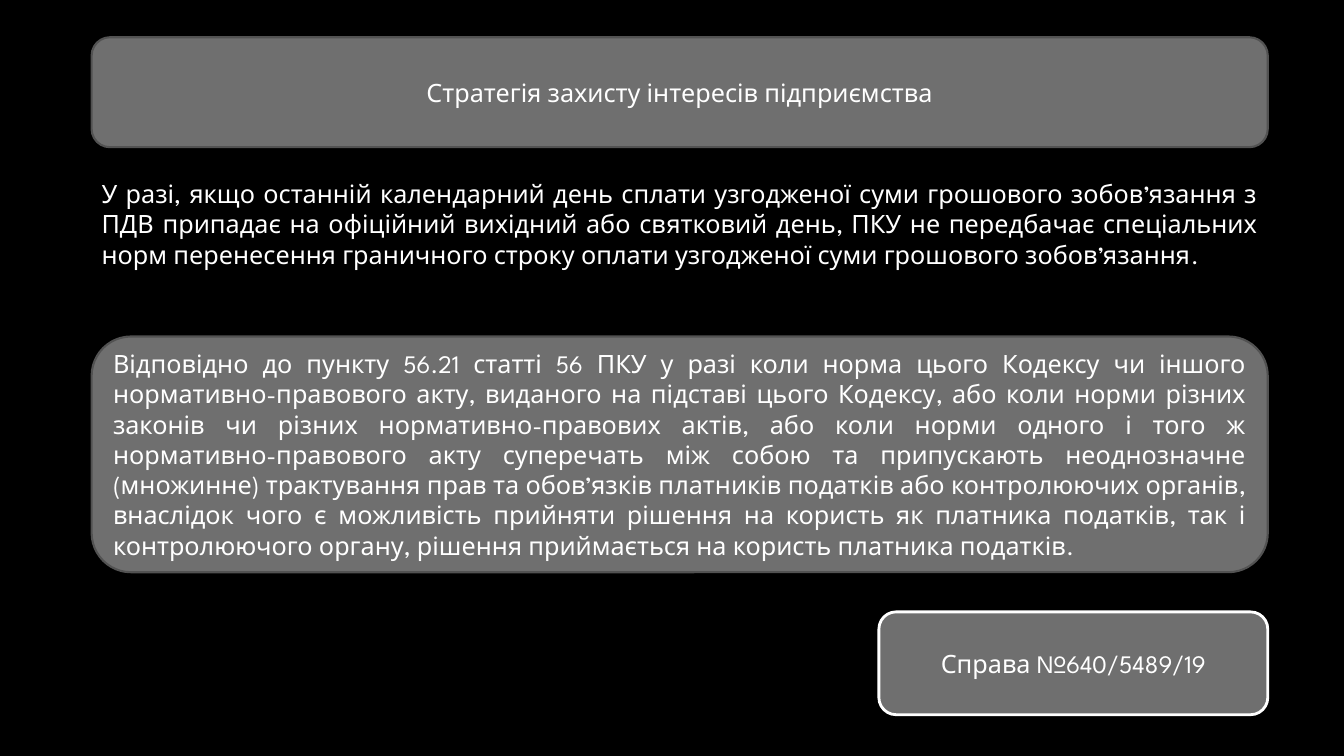
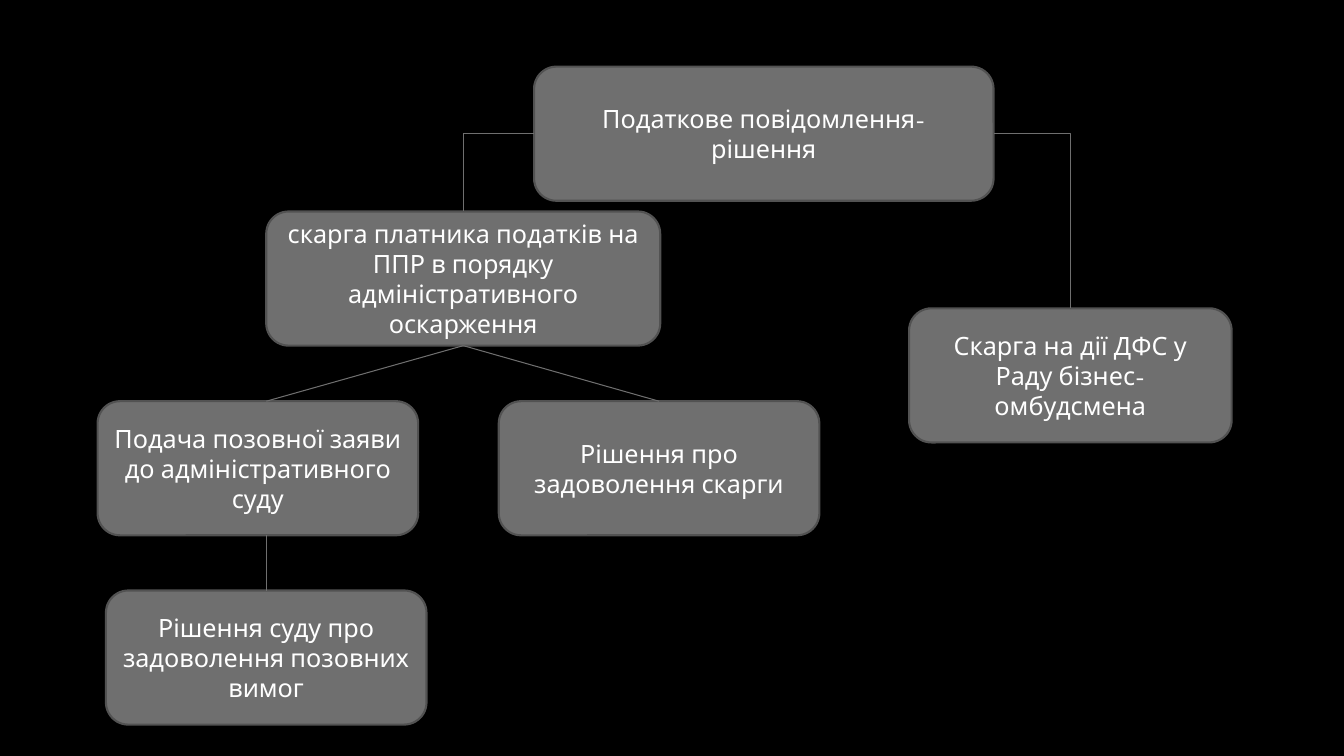
from lxml.etree import SubElement
from pptx import Presentation
from pptx.dml.color import RGBColor
from pptx.enum.shapes import MSO_CONNECTOR as Connector, MSO_SHAPE as Shape
from pptx.enum.text import MSO_ANCHOR as Anchor, PP_ALIGN as Align
from pptx.oxml.ns import qn
from pptx.util import Cm, Pt

BLACK = RGBColor(0x00, 0x00, 0x00)
WHITE = RGBColor(0xFF, 0xFF, 0xFF)
GRAY = RGBColor(0x6F, 0x6F, 0x6F)
DARK_GRAY = RGBColor(0x52, 0x52, 0x52)
FONT_NAME = "League Spartan"
FONT_SIZE = Pt(18)

# Page column of the first slide and box height of the diagram, in cm
LEFT, WIDTH = 2.31, 29.64
BOX_HEIGHT = 3.38

# Connection sites of a rectangle
TOP, LEFT_SIDE, BOTTOM, RIGHT_SIDE = range(4)


def add_slide(presentation):
    slide = presentation.slides.add_slide(presentation.slide_layouts[6])
    fill = slide.background.fill
    fill.solid()
    fill.fore_color.rgb = BLACK
    return slide


def write_text(shape, text, align):
    frame = shape.text_frame
    frame.word_wrap = True
    paragraph = frame.paragraphs[0]
    paragraph.text = text
    paragraph.alignment = align
    font = paragraph.font
    font.name = FONT_NAME
    font.size = FONT_SIZE
    font.color.rgb = WHITE


def add_text(slide, text, left, top, width, height):
    shape = slide.shapes.add_textbox(Cm(left), Cm(top), Cm(width), Cm(height))
    write_text(shape, text, Align.JUSTIFY)


def add_box(slide, text, left, top, width, height=BOX_HEIGHT,
            align=Align.CENTER, line_color=DARK_GRAY, line_width=1.5):
    shape = slide.shapes.add_shape(
        Shape.ROUNDED_RECTANGLE, Cm(left), Cm(top), Cm(width), Cm(height))
    shape.shadow.inherit = False
    shape.fill.solid()
    shape.fill.fore_color.rgb = GRAY
    shape.line.color.rgb = line_color
    shape.line.width = Pt(line_width)
    shape.text_frame.vertical_anchor = Anchor.MIDDLE
    write_text(shape, text, align)
    return shape


def add_link(slide, kind, begin=(0, 0), end=(0, 0), begin_join=None, end_join=None):
    """Draw a line; a join is a (shape, site) pair that overrides its point."""
    connector = slide.shapes.add_connector(kind, *map(Cm, begin + end))
    if begin_join:
        connector.begin_connect(*begin_join)
    if end_join:
        connector.end_connect(*end_join)
    connector.line.color.rgb = GRAY
    connector.line.width = Pt(0.75)
    properties = connector._element.spPr
    SubElement(properties, qn("a:effectLst"))
    if kind == Connector.ELBOW:  # a single bend
        properties.find(qn("a:prstGeom")).set("prst", "bentConnector2")


def build_strategy(presentation):
    slide = add_slide(presentation)
    add_box(slide, "Стратегія захисту інтересів підприємства", LEFT, 0.94, WIDTH, 2.77)
    add_text(
        slide,
        "У разі, якщо останній календарний день сплати узгодженої суми грошового "
        "зобов’язання з ПДВ припадає на офіційний вихідний або святковий день, ПКУ "
        "не передбачає спеціальних норм перенесення граничного строку оплати "
        "узгодженої суми грошового зобов’язання.",
        LEFT, 4.37, WIDTH, 4.11)
    add_box(
        slide,
        "Відповідно до пункту 56.21 статті 56 ПКУ у разі коли норма цього Кодексу чи "
        "іншого нормативно-правового акту, виданого на підставі цього Кодексу, або "
        "коли норми різних законів чи різних нормативно-правових актів, або коли "
        "норми одного і того ж нормативно-правового акту суперечать між собою та "
        "припускають неоднозначне (множинне) трактування прав та обов’язків платників "
        "податків або контролюючих органів, внаслідок чого є можливість прийняти "
        "рішення на користь як платника податків, так і контролюючого органу, рішення "
        "приймається на користь платника податків.",
        LEFT, 8.48, WIDTH, 5.94, align=Align.JUSTIFY)
    case_width = 9.8
    add_box(slide, "Справа №640/5489/19", LEFT + WIDTH - case_width, 15.42,
            case_width, 2.59, line_color=WHITE, line_width=2)


def build_appeal_diagram(presentation):
    slide = add_slide(presentation)
    outcome_top, outcome_width = 10.11, 8.08

    # Steps
    notice = add_box(slide, "Податкове повідомлення-рішення", 13.46, 1.68, 11.58)
    complaint = add_box(
        slide, "скарга платника податків на ППР в порядку адміністративного оскарження",
        6.71, 5.33, 9.93)
    ombudsman = add_box(
        slide, "Скарга на дії ДФС у Раду бізнес-омбудсмена", 22.91, 7.77, 8.13)
    add_box(slide, "Подача позовної заяви до адміністративного суду",
            2.46, outcome_top, outcome_width)
    granted = add_box(slide, "Рішення про задоволення скарги",
                      12.57, outcome_top, outcome_width)
    court_left = 2.67
    court = add_box(slide, "Рішення суду про задоволення позовних вимог",
                    court_left, 14.88, outcome_width)

    # Links; the ones at the claim run on the court decision's axis
    axis = court_left + outcome_width / 2
    add_link(slide, Connector.ELBOW,
             begin_join=(notice, LEFT_SIDE), end_join=(complaint, TOP))
    add_link(slide, Connector.ELBOW,
             begin_join=(notice, RIGHT_SIDE), end_join=(ombudsman, TOP))
    add_link(slide, Connector.STRAIGHT,
             begin_join=(complaint, BOTTOM), end=(axis, outcome_top))
    add_link(slide, Connector.STRAIGHT,
             begin_join=(complaint, BOTTOM), end_join=(granted, TOP))
    add_link(slide, Connector.STRAIGHT,
             begin=(axis, outcome_top + BOX_HEIGHT), end_join=(court, TOP))


def main():
    presentation = Presentation()
    presentation.slide_width = Cm(33.87)
    presentation.slide_height = Cm(19.05)
    build_strategy(presentation)
    build_appeal_diagram(presentation)
    presentation.save("out.pptx")


if __name__ == "__main__":
    main()
